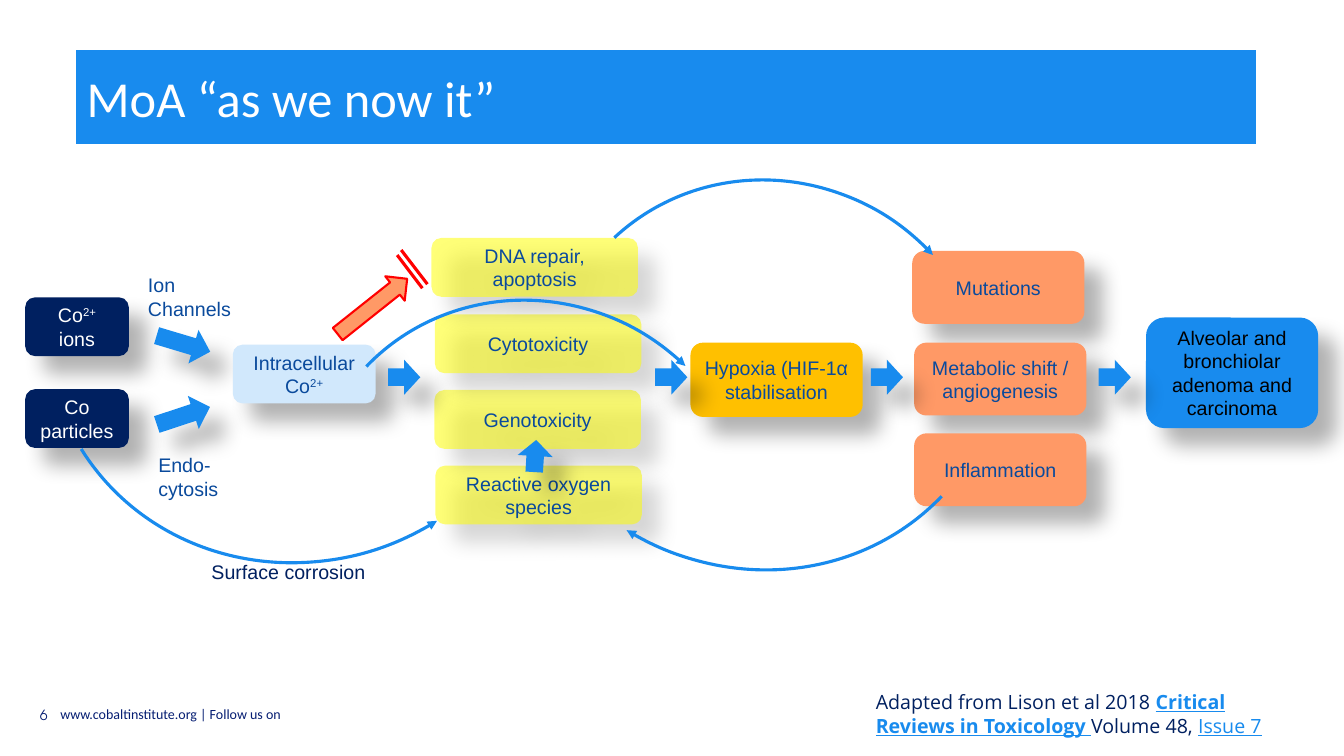
from lxml import etree
from pptx import Presentation
from pptx.dml.color import RGBColor
from pptx.enum import shapes, text
from pptx.oxml import ns
from pptx.util import Pt

BLUE, NAVY, TEXT_BLUE = "188BEE", "002060", "0A4A9C"
PALE, YELLOW, ORANGE, AMBER = "D1E8FC", "FFFF00", "FF9966", "FFC000"
RED, WHITE, BLACK, FOOTER = "FF0000", "FFFFFF", "000000", "051D72"
SHAPE = shapes.MSO_SHAPE
ALIGN, ANCHOR = text.PP_ALIGN, text.MSO_ANCHOR


def paint(color_format, color):
    color_format.rgb = RGBColor.from_string(color)


def add_xml(parent, tag, **attributes):
    return etree.SubElement(parent, ns.qn(tag), attributes)


class Diagram:
    """Holds the text style and the slide that is being drawn."""

    def __init__(self, slide, font="Arial", size=14):
        self.slide = slide
        self.style = {"name": font, "size": Pt(size)}

    def fill_text(self, shape, paragraphs, color, align=ALIGN.LEFT,
                  anchor=ANCHOR.TOP, wrap=True, **formats):
        """Fill a shape; each paragraph is a string or a list of (text, formats)."""
        frame = shape.text_frame
        frame.word_wrap, frame.vertical_anchor = wrap, anchor
        for index, content in enumerate(paragraphs):
            paragraph = frame.add_paragraph() if index else frame.paragraphs[0]
            paragraph.alignment = align
            runs = [(content, {})] if isinstance(content, str) else content
            for words, extra in runs:
                run = paragraph.add_run()
                run.text = words
                values = {"color": color, **self.style, **formats, **extra}
                paint(run.font.color, values.pop("color"))
                if values.pop("superscript", False):
                    run.font._element.set("baseline", "30000")
                for key, value in values.items():
                    setattr(run.font, key, value)

    def title(self, words, box):
        title = self.slide.shapes.title
        title.left, title.top, title.width, title.height = map(Pt, box)
        title.fill.solid()
        paint(title.fill.fore_color, BLUE)
        paint(title.line.color, BLUE)
        self.fill_text(title, [words], WHITE, anchor=ANCHOR.MIDDLE,
                       name="Calibri", size=Pt(36))

    def label(self, box, paragraphs, color, **formats):
        label = self.slide.shapes.add_textbox(*map(Pt, box))
        self.fill_text(label, paragraphs, color, **formats)

    def shape(self, kind, box, fill=None, line=None, width=1.5,
              rotation=0, opacity=None, shadow=True):
        shape = self.slide.shapes.add_shape(kind, *map(Pt, box))
        shape.rotation = rotation
        shape.shadow.inherit = False
        if fill:
            shape.fill.solid()
            paint(shape.fill.fore_color, fill)
        else:
            shape.fill.background()
        properties = shape._element.spPr
        if opacity:
            rgb = properties.find(ns.qn("a:solidFill"))[0]
            add_xml(rgb, "a:alpha", val=str(opacity * 1000))
        if line:
            paint(shape.line.color, line)
            shape.line.width = Pt(width)
        else:
            shape.line.fill.background()
        if shadow:
            outer = add_xml(properties.find(ns.qn("a:effectLst")), "a:outerShdw",
                            blurRad=str(Pt(15)), dist=str(Pt(18)),
                            dir="2700000", algn="tl", rotWithShape="0")
            add_xml(add_xml(outer, "a:srgbClr", val=BLACK), "a:alpha", val="30000")
        return shape

    def node(self, box, content, fill, color=TEXT_BLUE, opacity=None):
        node = self.shape(SHAPE.ROUNDED_RECTANGLE, box, fill, opacity=opacity)
        self.fill_text(node, [content], color, ALIGN.CENTER, ANCHOR.MIDDLE)

    def block_arrow(self, box, rotation=0):
        self.shape(SHAPE.RIGHT_ARROW, box, BLUE, rotation=rotation)

    def curve(self, box, rotation, flip=None, start=162):
        """Draw an arc with an arrowhead at its start."""
        arc = self.shape(SHAPE.ARC, box, line=BLUE, width=2.25,
                         rotation=rotation, shadow=False)
        arc.adjustments[0] = start
        properties = arc._element.spPr
        if flip:
            properties.find(ns.qn("a:xfrm")).set(flip, "1")
        add_xml(properties.find(ns.qn("a:ln")), "a:headEnd", type="triangle")

    def stroke(self, *ends):
        stroke = self.slide.shapes.add_connector(
            shapes.MSO_CONNECTOR.STRAIGHT, *map(Pt, ends))
        paint(stroke.line.color, RED)
        stroke.line.width = Pt(2.25)
        add_xml(stroke._element.spPr, "a:effectLst")


def main():
    deck = Presentation()
    deck.slide_width, deck.slide_height = Pt(960), Pt(540)
    diagram = Diagram(deck.slides.add_slide(deck.slide_layouts[5]))
    raised = {"superscript": True}

    diagram.label((13, 496, 28, 29), ["6"], FOOTER, align=ALIGN.RIGHT,
                  anchor=ANCHOR.MIDDLE, name="TeX Gyre Adventor", size=Pt(10))
    diagram.label((36, 500.4, 265.7, 19.4), ["www.cobaltinstitute.org | Follow us on"],
                  FOOTER, name="Calibri", size=Pt(10))
    diagram.title("MoA “as we now it”", (54.7, 36, 842.4, 66.5))

    # Uptake of cobalt into the cell
    diagram.node((18, 212.4, 74, 42), [("Co", {}), ("2+", raised), (" ions", {})],
                 NAVY, WHITE)
    diagram.node((18, 278, 74, 42), "Co particles", NAVY, WHITE)
    diagram.block_arrow((111, 233, 40, 25), 16.7)
    diagram.block_arrow((111, 284.5, 40, 25), 341.7)
    diagram.label((98.6, 191.5, 74, 41), ["Ion", "Channels"], TEXT_BLUE, wrap=False)
    diagram.label((106, 320, 58, 41), ["Endo-", "cytosis"], TEXT_BLUE, wrap=False)
    diagram.node((166.3, 246.2, 102, 42),
                 [("Intracellular Co", {}), ("2+", raised)], PALE)

    # Cellular effects
    for left, top, effect in ((311, 332.6, "Reactive oxygen species"),
                              (310.3, 278.6, "Genotoxicity"),
                              (310.6, 224.6, "Cytotoxicity"),
                              (308.2, 170, "DNA repair, apoptosis")):
        diagram.node((left, top, 147.5, 42), effect, YELLOW, opacity=53)
    diagram.node((493.2, 244.8, 123, 53), "Hypoxia (HIF-1α stabilisation", AMBER)

    # Outcomes
    for left, top, outcome in ((651.6, 179.3, "Mutations"),
                               (653, 244.8, "Metabolic shift / angiogenesis"),
                               (653, 309.6, "Inflammation")):
        diagram.node((left, top, 123, 52), outcome, ORANGE)
    diagram.node((818.6, 226.8, 123, 79),
                 "Alveolar and bronchiolar adenoma and carcinoma", BLUE, BLACK)

    for left in (277.2, 468, 622, 784.8):
        diagram.block_arrow((left, 257, 23, 25))
    diagram.block_arrow((370.8, 313.2, 23, 25), 273.5)

    # Blocked path to DNA repair
    diagram.shape(SHAPE.UP_ARROW, (254.9, 187.2, 22.3, 63.4), ORANGE, RED,
                  rotation=51.5, shadow=False)
    diagram.stroke(283.7, 182.2, 301.7, 205.9)
    diagram.stroke(286.6, 178.6, 305.3, 203)

    diagram.curve((29.5, 43.2, 377.3, 355.7), 148.1)
    diagram.curve((347.8, 46.1, 377.3, 355.7), 223.8, "flipH", 170.36)
    diagram.curve((216, 217.4, 328.3, 316), 223.8, "flipV", 161.98)
    diagram.curve((386.6, 131.8, 328.3, 316), 227, "flipV", 161.98)

    diagram.label((144, 396.7, 153.4, 24.5), ["Surface corrosion"], NAVY)
    link = {"color": BLUE, "underline": True}
    diagram.label((618.5, 489.6, 293, 41), [[
        ("Adapted from Lison et al 2018 ", {}),
        ("Critical Reviews in Toxicology ", {**link, "bold": True}),
        ("Volume 48, ", {}),
        ("Issue 7", link)]], NAVY, name="Open Sans")

    deck.save("out.pptx")


if __name__ == "__main__":
    main()
